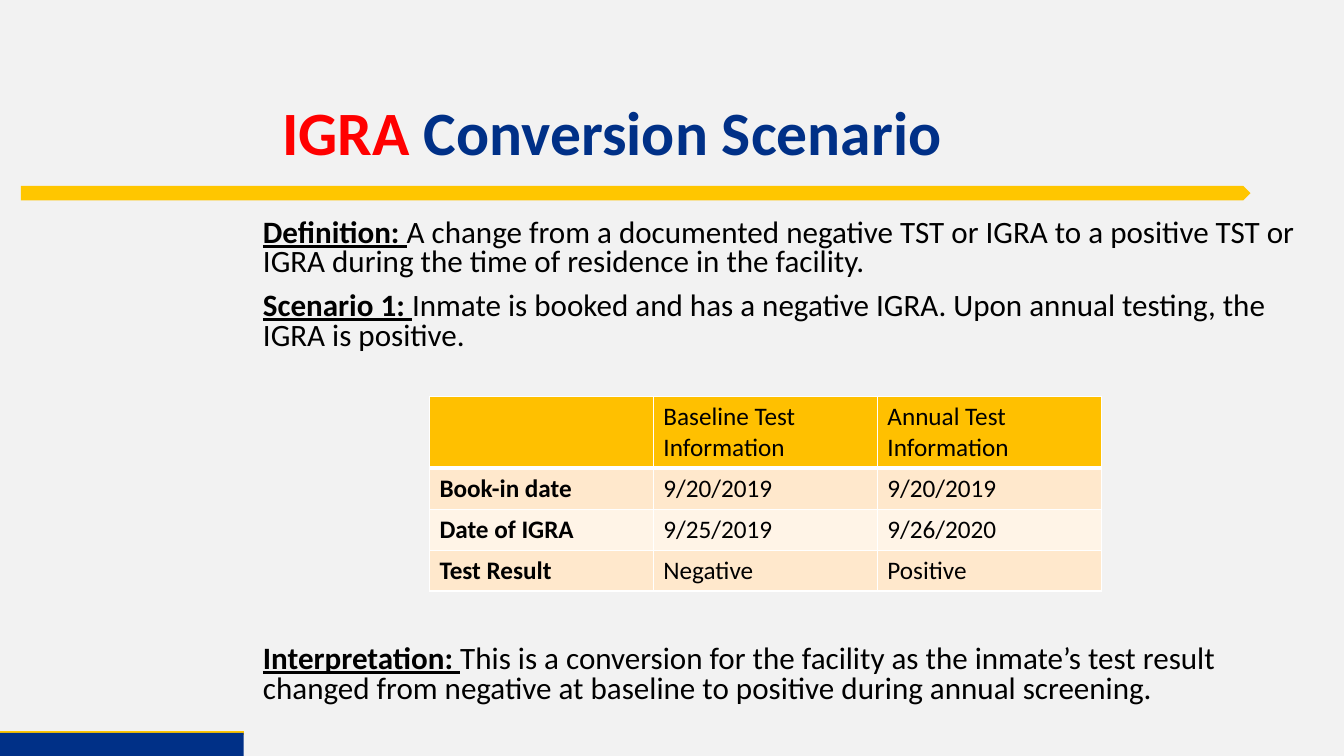
from dataclasses import dataclass

from lxml import etree
from pptx import Presentation
from pptx.dml.color import RGBColor
from pptx.enum.shapes import MSO_CONNECTOR, MSO_SHAPE
from pptx.enum.text import MSO_ANCHOR, MSO_AUTO_SIZE, PP_ALIGN
from pptx.oxml.ns import qn
from pptx.util import Emu, Pt

PENTAGON, RECTANGLE = MSO_SHAPE.PENTAGON, MSO_SHAPE.RECTANGLE
STRAIGHT = MSO_CONNECTOR.STRAIGHT
LEFT, MIDDLE, FIXED = PP_ALIGN.LEFT, MSO_ANCHOR.MIDDLE, MSO_AUTO_SIZE.NONE
EMU_PER_PX = 9525
TITLE_ONLY = 5


@dataclass(frozen=True)
class Theme:
    font: str = "Calibri"
    background: str = "F2F2F2"
    gold: str = "FFC600"
    navy: str = "003087"
    red: str = "FF0000"
    black: str = "000000"
    white: str = "FFFFFF"
    header_fill: str = "FFC000"
    bands: tuple[str, str] = ("FFE8CC", "FFF4E7")
    title_size: float = 44
    body_size: float = 22.2
    table_size: float = 18


@dataclass(frozen=True)
class Frame:
    left: int
    top: int
    width: int
    height: int

    def emu(self) -> tuple[Emu, ...]:
        return tuple(px(n) for n in (self.left, self.top, self.width, self.height))


@dataclass(frozen=True)
class Bar:
    preset: int
    frame: Frame
    colour: str


@dataclass(frozen=True)
class Statement:
    label: str
    text: str


@dataclass(frozen=True)
class TextBlock:
    frame: Frame
    statements: tuple[Statement, ...]


THEME = Theme()

# Content and places
TITLE_FRAME = Frame(259, 60, 982, 139)
BARS = (
    Bar(PENTAGON, Frame(20, 177, 1171, 14), THEME.gold),
    Bar(RECTANGLE, Frame(0, 698, 232, 22), THEME.navy),
)
BLOCKS = (
    TextBlock(Frame(241, 204, 1014, 140), (
        Statement("Definition: ", "A change from a documented negative TST or IGRA to a "
                  "positive TST or IGRA during the time of residence in the facility."),
        Statement("Scenario 1: ", "Inmate is booked and has a negative IGRA. "
                  "Upon annual testing, the IGRA is positive."),
    )),
    TextBlock(Frame(241, 610, 1014, 80), (
        Statement("Interpretation: ", "This is a conversion for the facility as the inmate’s "
                  "test result changed from negative at baseline to positive during "
                  "annual screening."),
    )),
)
TEST_ROWS = (
    ("", "Baseline Test Information", "Annual Test Information"),
    ("Book-in date", "9/20/2019", "9/20/2019"),
    ("Date of IGRA", "9/25/2019", "9/26/2020"),
    ("Test Result", "Negative", "Positive"),
)
HEADER_HEIGHT, ROW_HEIGHT = 68, 39
TABLE_FRAME = Frame(409, 378, 640, HEADER_HEIGHT + 3 * ROW_HEIGHT)


def px(length: int) -> Emu:
    return Emu(length * EMU_PER_PX)


def rgb(colour: str) -> RGBColor:
    return RGBColor.from_string(colour)


def add_text(para, text: str, *, size: float, colour: str = THEME.black,
             bold: bool = False, underline: bool = False) -> None:
    span = para.add_run()
    span.text = text
    font = span.font
    font.name, font.size, font.bold, font.underline = THEME.font, Pt(size), bold, underline
    font.color.rgb = rgb(colour)


def add_title(page) -> None:
    title = page.shapes.title
    title.left, title.top, title.width, title.height = TITLE_FRAME.emu()
    title.text_frame.auto_size = FIXED
    title.text_frame.vertical_anchor = MIDDLE
    para = title.text_frame.paragraphs[0]
    para.alignment, para.line_spacing = LEFT, 0.9
    for text, colour in (("IGRA", THEME.red), (" Conversion Scenario", THEME.navy)):
        add_text(para, text, size=THEME.title_size, colour=colour, bold=True)


def add_rule(page, left: int, right: int, top: int) -> None:
    rule = page.shapes.add_connector(STRAIGHT, px(left), px(top), px(right), px(top))
    rule.line.color.rgb = rgb(THEME.gold)
    rule.line.width = Pt(3)
    etree.SubElement(rule._element.spPr, qn("a:effectLst"))


def add_bar(page, bar: Bar) -> None:
    shape = page.shapes.add_shape(bar.preset, *bar.frame.emu())
    shape.shadow.inherit = False
    shape.fill.solid()
    shape.fill.fore_color.rgb = rgb(bar.colour)
    shape.line.fill.background()


def add_block(page, block: TextBlock) -> None:
    box = page.shapes.add_textbox(*block.frame.emu())
    box.text_frame.word_wrap = True
    for index, statement in enumerate(block.statements):
        para = box.text_frame.add_paragraph() if index else box.text_frame.paragraphs[0]
        para.line_spacing = 0.8
        if index:
            para.space_before = Pt(10)
        add_text(para, statement.label, size=THEME.body_size, bold=True, underline=True)
        add_text(para, statement.text, size=THEME.body_size)


def set_borders(cell, widths: dict[str, int]) -> None:
    properties = cell._tc.get_or_add_tcPr()
    for index, (side, width) in enumerate(widths.items()):
        line = etree.Element(qn(f"a:{side}"), w=str(Pt(width)))
        fill = etree.SubElement(line, qn("a:solidFill"))
        etree.SubElement(fill, qn("a:srgbClr"), val=THEME.white)
        properties.insert(index, line)


def add_test_table(page) -> None:
    table = page.shapes.add_table(len(TEST_ROWS), len(TEST_ROWS[0]), *TABLE_FRAME.emu()).table
    for row, texts in enumerate(TEST_ROWS):
        table.rows[row].height = px(ROW_HEIGHT if row else HEADER_HEIGHT)
        for column, text in enumerate(texts):
            cell = table.cell(row, column)
            cell.fill.solid()
            cell.fill.fore_color.rgb = rgb(THEME.bands[(row - 1) % 2] if row
                                           else THEME.header_fill)
            set_borders(cell, {"lnL": 1, "lnR": 1, "lnT": 3 if row == 1 else 1,
                               "lnB": 1 if row else 3})
            if text:
                add_text(cell.text_frame.paragraphs[0], text, size=THEME.table_size,
                         bold=column == 0)


def main() -> None:
    deck = Presentation()
    deck.slide_width, deck.slide_height = px(1280), px(720)
    page = deck.slides.add_slide(deck.slide_layouts[TITLE_ONLY])
    page.background.fill.solid()
    page.background.fill.fore_color.rgb = rgb(THEME.background)

    # Rule and bars
    add_rule(page, 0, 232, 698)
    for bar in BARS:
        add_bar(page, bar)

    # Title, statements and table
    add_title(page)
    for block in BLOCKS:
        add_block(page, block)
    add_test_table(page)
    deck.save("out.pptx")


if __name__ == "__main__":
    main()
